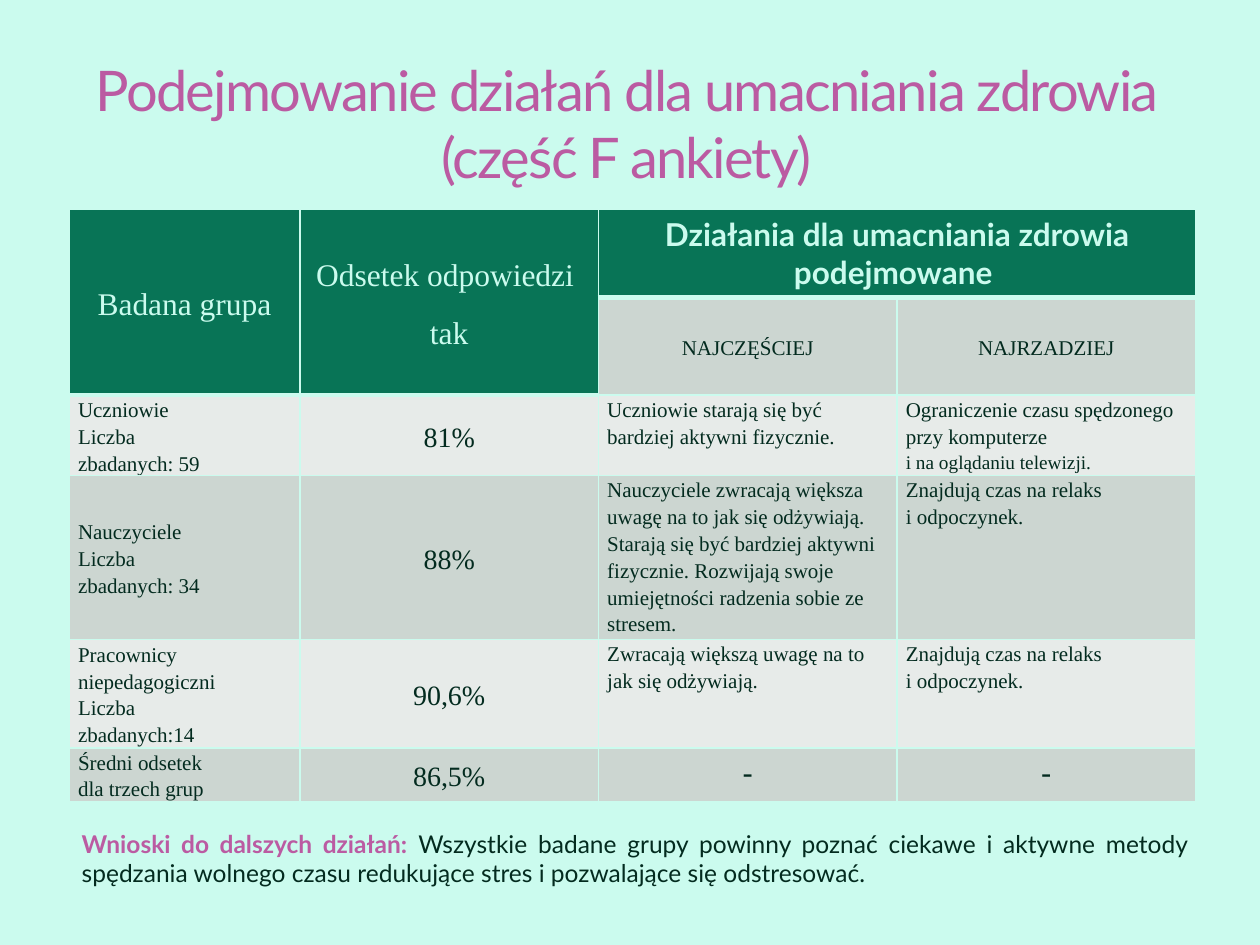
import pptx
import pptx.util
import pptx.dml.color
import pptx.enum.text
import pptx.oxml.ns
import lxml.etree

Inches, Pt = pptx.util.Inches, pptx.util.Pt
ALIGN = pptx.enum.text.PP_ALIGN
ANCHOR = pptx.enum.text.MSO_ANCHOR

MINT, GREEN, PINK, INK = "CBFBEE", "087456", "BB5BA2", "032B1F"
BANDS = "E7EBE9", "CCD6D1"
SERIF, SANS = "Times New Roman", "Lato"

TITLE = "Podejmowanie działań dla umacniania zdrowia (część F ankiety)"
GROUP_HEADING = "Badana grupa"
SHARE_HEADING = ["Odsetek odpowiedzi ", "tak"]
ACTIONS_HEADING = "Działania dla umacniania zdrowia podejmowane "
FREQUENCIES = ["NAJCZĘŚCIEJ", "NAJRZADZIEJ"]
RELAX = "Znajdują czas na relaks \ni odpoczynek."
RESULTS = [
    ("Uczniowie\nLiczba \nzbadanych: 59", "81%",
     "Uczniowie starają się być bardziej aktywni fizycznie.",
     "Ograniczenie czasu spędzonego przy komputerze \n"),
    ("Nauczyciele\nLiczba \nzbadanych: 34", "88%",
     "Nauczyciele zwracają większa uwagę na to jak się odżywiają. "
     "Starają się być bardziej aktywni fizycznie. Rozwijają swoje "
     "umiejętności radzenia sobie ze stresem.", RELAX),
    ("Pracownicy niepedagogiczni\nLiczba \nzbadanych:14", "90,6%",
     "Zwracają większą uwagę na to \njak się odżywiają.", RELAX),
    ("Średni odsetek \ndla trzech grup", "86,5%", "-", "-"),
]
TELEVISION = "i na oglądaniu telewizji."
CONCLUSION_LABEL = "Wnioski do dalszych działań: "
CONCLUSION = ("Wszystkie badane grupy powinny poznać ciekawe i aktywne metody "
              "spędzania wolnego czasu redukujące stres i pozwalające się odstresować.")

COLUMN_WIDTHS = [1.83, 2.37, 2.37, 2.37]
ROW_HEIGHTS = [0.69, 0.77, 0.64, 1.3, 0.86, 0.42]


def rgb(value):
    return pptx.dml.color.RGBColor.from_string(value)


def write(paragraph, text, size=12, font=SERIF, color=INK, bold=False,
          align=ALIGN.LEFT, line=None, after=0, tracking=None):
    paragraph.alignment = align
    paragraph.space_before, paragraph.space_after = Pt(0), Pt(after)
    if line:
        paragraph.line_spacing = line
    for index, part in enumerate(text.split("\n")):
        if index:
            paragraph.add_line_break()
        if not part:
            continue
        run = paragraph.add_run()
        run.text = part
        run.font.size, run.font.name, run.font.bold = Pt(size), font, bold
        run.font.color.rgb = rgb(color)
        if tracking:
            run.font._element.set("spc", str(tracking))


def set_borders(cell, bottom=1):
    properties = cell._tc.get_or_add_tcPr()
    for index, (side, width) in enumerate(
            [("lnL", 1), ("lnR", 1), ("lnT", 1), ("lnB", bottom)]):
        border = lxml.etree.Element(pptx.oxml.ns.qn("a:" + side), w=str(Pt(width)))
        fill = lxml.etree.SubElement(border, pptx.oxml.ns.qn("a:solidFill"))
        lxml.etree.SubElement(fill, pptx.oxml.ns.qn("a:srgbClr"), val=MINT)
        properties.insert(index, border)


def fill_cell(cell, paragraphs, fill, anchor=ANCHOR.MIDDLE, tight=True, **style):
    cell.fill.solid()
    cell.fill.fore_color.rgb = rgb(fill)
    cell.vertical_anchor = anchor
    if tight:
        cell.margin_left = cell.margin_right = Inches(0.07)
        cell.margin_top = cell.margin_bottom = 0
        style = {"line": 1.15, "after": 10, **style}
    frame = cell.text_frame
    for index, text in enumerate(paragraphs):
        paragraph = frame.add_paragraph() if index else frame.paragraphs[0]
        write(paragraph, text, **style)


def add_results(slide):
    table = slide.shapes.add_table(
        len(ROW_HEIGHTS), len(COLUMN_WIDTHS), Inches(0.55), Inches(1.66),
        Inches(sum(COLUMN_WIDTHS)), Inches(sum(ROW_HEIGHTS))).table
    for column, width in zip(table.columns, COLUMN_WIDTHS):
        column.width = Inches(width)
    for row, height in zip(table.rows, ROW_HEIGHTS):
        row.height = Inches(height)
    table.cell(0, 0).merge(table.cell(1, 0))
    table.cell(0, 1).merge(table.cell(1, 1))
    table.cell(0, 2).merge(table.cell(0, 3))

    heading = {"size": 18, "color": MINT, "align": ALIGN.CENTER}
    fill_cell(table.cell(0, 0), [GROUP_HEADING], GREEN, **heading)
    fill_cell(table.cell(0, 1), SHARE_HEADING, GREEN, **heading)
    fill_cell(table.cell(0, 2), [ACTIONS_HEADING], GREEN, ANCHOR.TOP, tight=False,
              font=SANS, bold=True, **heading)
    for column, frequency in enumerate(FREQUENCIES, 2):
        fill_cell(table.cell(1, column), [frequency], BANDS[1], align=ALIGN.CENTER)

    for row, (group, share, *actions) in enumerate(RESULTS, 2):
        band = BANDS[row % 2]
        last = row == len(ROW_HEIGHTS) - 1
        fill_cell(table.cell(row, 0), [group], band,
                  ANCHOR.TOP if last else ANCHOR.MIDDLE)
        fill_cell(table.cell(row, 1), [share], band, size=16, align=ALIGN.CENTER)
        for column, action in enumerate(actions, 2):
            style = ({"tight": False, "size": 18, "font": SANS, "align": ALIGN.CENTER}
                     if last else {})
            fill_cell(table.cell(row, column), [action], band, ANCHOR.TOP, **style)
    write(table.cell(2, 3).text_frame.paragraphs[0], TELEVISION, size=11,
          line=1.15, after=10)

    for row in range(len(ROW_HEIGHTS)):
        for column in range(len(COLUMN_WIDTHS)):
            under_heading = row == 0 or (row == 1 and column < 2)
            set_borders(table.cell(row, column), 3 if under_heading else 1)


def main():
    deck = pptx.Presentation()
    deck.slide_width, deck.slide_height = Inches(10), Inches(7.5)
    slide = deck.slides.add_slide(deck.slide_layouts[5])
    slide.background.fill.solid()
    slide.background.fill.fore_color.rgb = rgb(MINT)

    add_results(slide)

    title = slide.shapes.title
    title.left, title.top = Inches(0.47), Inches(0.39)
    title.width, title.height = Inches(9), Inches(1.17)
    title.text_frame.vertical_anchor = ANCHOR.MIDDLE
    write(title.text_frame.paragraphs[0], TITLE, size=32, font=SANS, color=PINK,
          align=ALIGN.CENTER, tracking=-100)

    conclusion = slide.shapes.add_textbox(
        Inches(0.55), Inches(6.53), Inches(8.98), Inches(0.57)).text_frame
    conclusion.word_wrap = True
    sentence = conclusion.paragraphs[0]
    justified = {"size": 14, "font": SANS, "align": ALIGN.JUSTIFY}
    write(sentence, CONCLUSION_LABEL, color=PINK, bold=True, **justified)
    write(sentence, CONCLUSION, **justified)

    deck.save("out.pptx")


if __name__ == "__main__":
    main()
